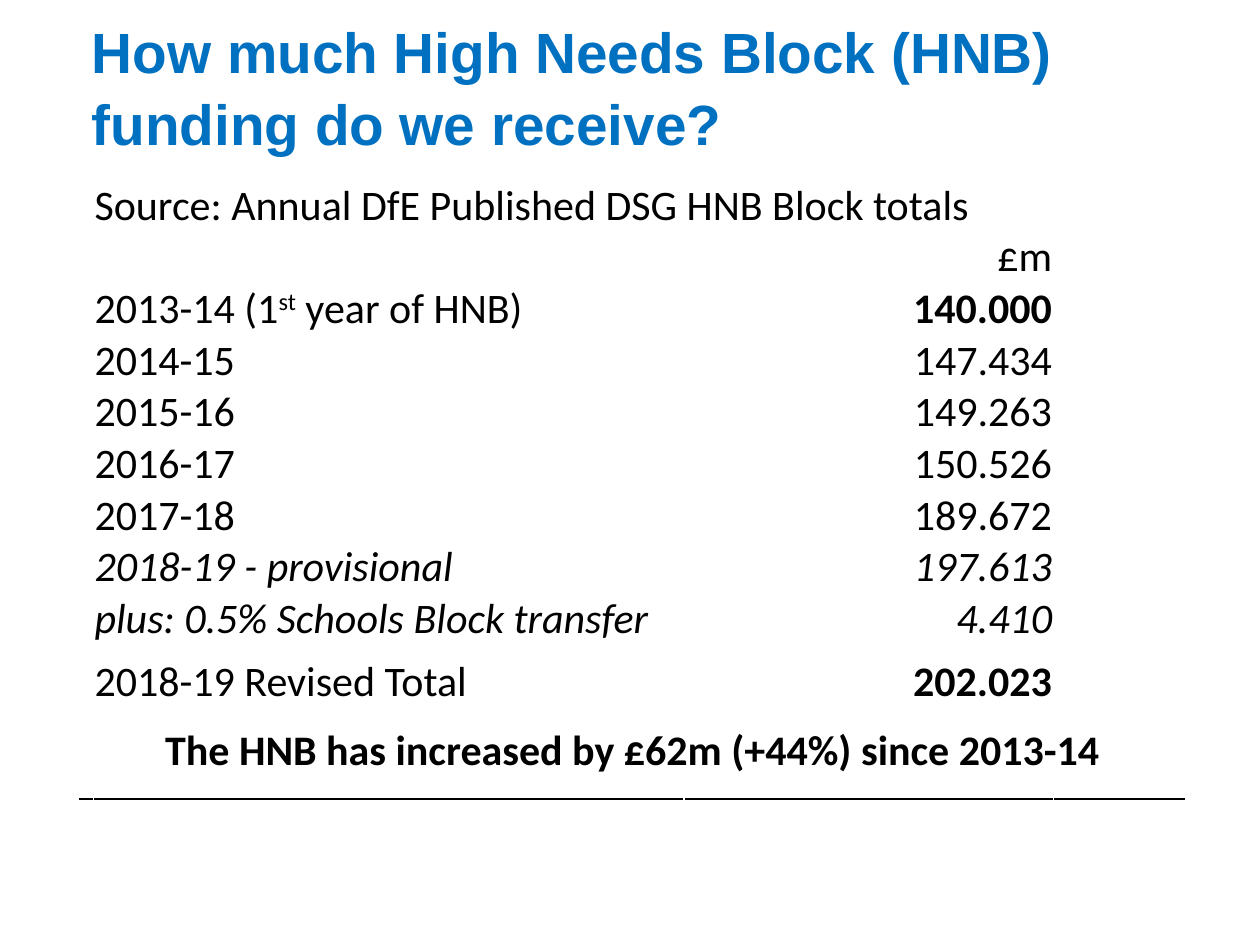
from dataclasses import dataclass

from lxml import etree
from pptx import Presentation, util as u
from pptx.dml.color import RGBColor
from pptx.enum import shapes, text
from pptx.oxml.ns import qn

WIDTH, HEIGHT = 10, 7.5
BLACK, WHITE, BLUE = "000000", "FFFFFF", "0070C0"
BODY_SIZE = 24
LEFT, CENTER, RIGHT = text.PP_ALIGN.LEFT, text.PP_ALIGN.CENTER, text.PP_ALIGN.RIGHT
TOP, MIDDLE, BOTTOM = (text.MSO_ANCHOR.TOP, text.MSO_ANCHOR.MIDDLE,
                       text.MSO_ANCHOR.BOTTOM)


@dataclass(frozen=True)
class Piece:
    """One run of text."""
    words: str
    bold: bool = False
    italic: bool = False
    raised: bool = False
    size: float = BODY_SIZE
    font: str = "Calibri"
    color: str = BLACK


@dataclass(frozen=True)
class FundingRow:
    label: tuple[Piece, ...] = ()
    amount: tuple[Piece, ...] = ()
    height: float = 0.4
    anchor: text.MSO_ANCHOR = TOP


def year(label: str, amount: str, italic: bool = False, bold_amount: bool = False,
         height: float = 0.4) -> FundingRow:
    return FundingRow((Piece(label, italic=italic),),
                      (Piece(amount, bold=bold_amount, italic=italic),), height)


COLUMNS = (4.69, 2.93, 1.05)
FUNDING = (
    FundingRow((Piece("Source: Annual DfE Published DSG HNB Block totals"),),
               anchor=BOTTOM),
    FundingRow(amount=(Piece("£m"),), anchor=BOTTOM),
    FundingRow((Piece("2013-14 (1"), Piece("st", raised=True),
                Piece(" year of HNB)")), (Piece("140.000", bold=True),)),
    year("2014-15", "147.434"),
    year("2015-16", "149.263"),
    year("2016-17", "150.526"),
    year("2017-18", "189.672"),
    year("2018-19 - provisional", "197.613", italic=True),
    year("plus: 0.5% Schools Block transfer", "4.410", italic=True, height=0.5),
    year("2018-19 Revised Total", "202.023", bold_amount=True),
    FundingRow(height=0.3),
    FundingRow(height=0.5),
)


def rgb(value: str) -> RGBColor:
    return RGBColor.from_string(value)


def write(frame, pieces: tuple[Piece, ...], align) -> None:
    paragraph = frame.paragraphs[0]
    paragraph.alignment = align
    for piece in pieces:
        run = paragraph.add_run()
        run.text = piece.words
        run.font.name = piece.font
        run.font.size = u.Pt(piece.size)
        run.font.bold = piece.bold
        run.font.italic = piece.italic
        run.font.color.rgb = rgb(piece.color)
        if piece.raised:
            run._r.get_or_add_rPr().set("baseline", "30000")


def add_caption(slide, left: float, top: float, width: float, height: float,
                piece: Piece, align, anchor=TOP):
    frame = slide.shapes.add_textbox(
        *(u.Inches(v) for v in (left, top, width, height))).text_frame
    frame.word_wrap = True
    frame.vertical_anchor = anchor
    write(frame, (piece,), align)
    return frame


def set_borders(cell, color: str, points: float) -> None:
    properties = cell._tc.get_or_add_tcPr()
    for place, side in enumerate(("lnL", "lnR", "lnT", "lnB")):
        border = etree.Element(qn(f"a:{side}"), w=str(u.Pt(points)))
        fill = etree.SubElement(border, qn("a:solidFill"))
        etree.SubElement(fill, qn("a:srgbClr"), val=color)
        properties.insert(place, border)


def add_rule(slide, left: float, right: float, y: float) -> None:
    rule = slide.shapes.add_connector(
        shapes.MSO_CONNECTOR.STRAIGHT,
        *(u.Inches(v) for v in (left, y, right, y)))
    rule.line.color.rgb = rgb(BLACK)
    rule.line.width = u.Pt(1)
    etree.SubElement(rule._element.spPr, qn("a:effectLst"))


def add_funding_table(slide, left: float, top: float) -> None:
    table = slide.shapes.add_table(
        len(FUNDING), len(COLUMNS), u.Inches(left), u.Inches(top),
        u.Inches(sum(COLUMNS)), u.Inches(sum(r.height for r in FUNDING))).table
    table.first_row = table.horz_banding = False
    for column, width in zip(table.columns, COLUMNS):
        column.width = u.Inches(width)
    for table_row, funding in zip(table.rows, FUNDING):
        table_row.height = u.Inches(funding.height)
        contents = ((funding.label, LEFT), (funding.amount, RIGHT), ((), LEFT))
        for cell, (pieces, align) in zip(table_row.cells, contents):
            cell.fill.background()
            set_borders(cell, WHITE, 1)
            cell.margin_left = cell.margin_right = cell.margin_top = u.Inches(0.01)
            cell.margin_bottom = 0
            cell.vertical_anchor = funding.anchor
            write(cell.text_frame, pieces, align)
    # The source line runs across both text columns
    table.cell(0, 0).merge(table.cell(0, 1))


def main() -> None:
    deck = Presentation()
    deck.slide_width, deck.slide_height = u.Inches(WIDTH), u.Inches(HEIGHT)
    slide = deck.slides.add_slide(deck.slide_layouts[6])

    # Heading
    heading = add_caption(
        slide, 0.63, 0.05, 0.9 * WIDTH, HEIGHT / 6,
        Piece("How much High Needs Block (HNB) funding do we receive?",
              bold=True, size=32.4, font="Arial", color=BLUE), LEFT, MIDDLE)
    heading.paragraphs[0].line_spacing = 1.05

    # Closing rule, yearly funding and conclusion
    add_rule(slide, 0.63, 9.41, 6.34)
    add_funding_table(slide, 0.74, 1.42)
    add_caption(slide, 0.81, 5.69, 8.42, 0.5,
                Piece("The HNB has increased by £62m (+44%) since 2013-14",
                      bold=True), CENTER)
    deck.save("out.pptx")


if __name__ == "__main__":
    main()
